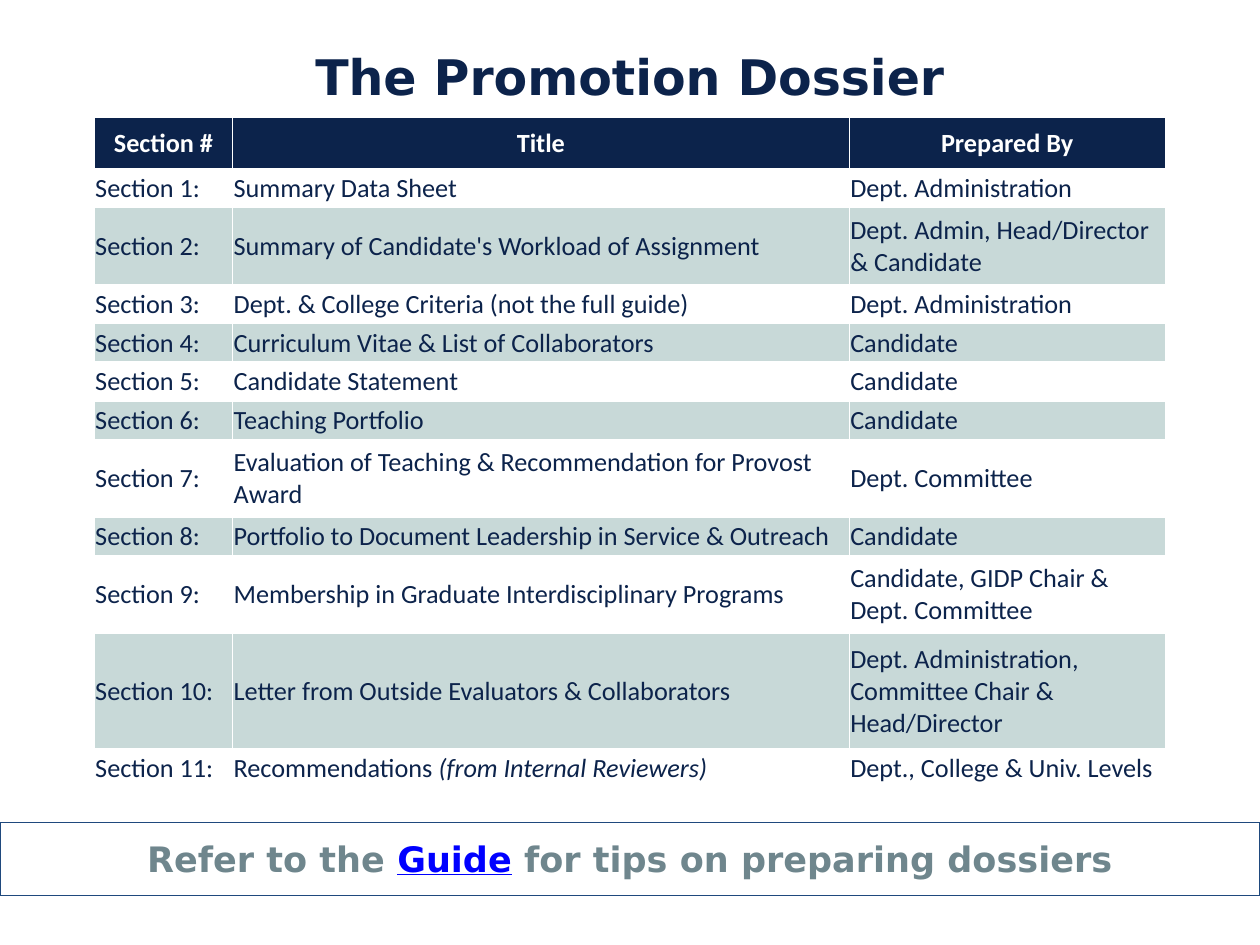
from dataclasses import dataclass

from lxml import etree
from pptx import Presentation
from pptx import util as u
from pptx.dml.color import RGBColor
from pptx.enum import shapes, text
from pptx.oxml.ns import qn

NAVY = RGBColor(0x0C, 0x23, 0x4B)
SAGE = RGBColor(0xC8, 0xD9, 0xD8)
SLATE = RGBColor(0x6F, 0x86, 0x8D)
OUTLINE = RGBColor(0x1F, 0x49, 0x7D)
LINK = RGBColor(0x00, 0x00, 0xFF)
WHITE = RGBColor(0xFF, 0xFF, 0xFF)

HEADING_FONT = "DejaVu Sans"
TABLE_FONT = "Calibri"
COLUMN_WIDTHS = (2.79, 12.43, 6.37)
HEADER_HEIGHT = 1.03
LINE_HEIGHT = 0.78


@dataclass
class Section:
    title: str
    prepared_by: str
    lines: int = 1
    title_note: str = ""


SECTIONS = [
    Section("Summary Data Sheet", "Dept. Administration"),
    Section("Summary of Candidate's Workload of Assignment",
            "Dept. Admin, Head/Director & Candidate", 2),
    Section("Dept. & College Criteria (not the full guide)", "Dept. Administration"),
    Section("Curriculum Vitae & List of Collaborators", "Candidate"),
    Section("Candidate Statement", "Candidate"),
    Section("Teaching Portfolio", "Candidate"),
    Section("Evaluation of Teaching & Recommendation for Provost Award",
            "Dept. Committee", 2),
    Section("Portfolio to Document Leadership in Service & Outreach", "Candidate"),
    Section("Membership in Graduate Interdisciplinary Programs",
            "Candidate, GIDP Chair & Dept. Committee", 2),
    Section("Letter from Outside Evaluators & Collaborators",
            "Dept. Administration, Committee Chair & Head/Director", 3),
    Section("Recommendations ", "Dept., College & Univ. Levels",
            title_note="(from Internal Reviewers)"),
]


def set_font(font, name: str, size: float, color: RGBColor, bold: bool) -> None:
    font.name, font.size, font.bold = name, u.Pt(size), bold
    font.color.rgb = color


def add_borders(cell, color: RGBColor) -> None:
    """Draw a 1 pt line on every side; borders come before the fill."""
    tc_pr = cell._tc.get_or_add_tcPr()
    for i, side in enumerate(("a:lnL", "a:lnR", "a:lnT", "a:lnB")):
        ln = etree.Element(qn(side), w=str(u.Pt(1)))
        fill = etree.SubElement(ln, qn("a:solidFill"))
        etree.SubElement(fill, qn("a:srgbClr"), val=str(color))
        tc_pr.insert(i, ln)


def fill_cell(cell, words: str, fill: RGBColor | None, header: bool = False,
              note: str = "") -> None:
    cell.margin_left = cell.margin_right = cell.margin_top = u.Cm(0.02)
    cell.margin_bottom = 0
    cell.vertical_anchor = text.MSO_ANCHOR.MIDDLE
    if fill is None:
        cell.fill.background()
    else:
        cell.fill.solid()
        cell.fill.fore_color.rgb = fill
    add_borders(cell, WHITE)

    p = cell.text_frame.paragraphs[0]
    p.alignment = text.PP_ALIGN.CENTER if header else text.PP_ALIGN.LEFT
    set_font(p.font, TABLE_FONT, 15, WHITE if header else NAVY, header)
    p.add_run().text = words
    if note:
        r = p.add_run()
        r.text = note
        r.font.italic = True


def add_title(s) -> None:
    sp = s.shapes.add_textbox(u.Cm(1.9), 0, u.Cm(21.59), u.Cm(3.07))
    tf = sp.text_frame
    tf.word_wrap = True
    tf.vertical_anchor = text.MSO_ANCHOR.MIDDLE
    p = tf.paragraphs[0]
    p.text = "The Promotion Dossier"
    p.alignment = text.PP_ALIGN.CENTER
    set_font(p.font, HEADING_FONT, 28, NAVY, True)


def add_section_table(s) -> None:
    heights = [HEADER_HEIGHT] + [LINE_HEIGHT * sec.lines for sec in SECTIONS]
    table = s.shapes.add_table(
        len(heights), len(COLUMN_WIDTHS), u.Cm(1.9), u.Cm(2.37),
        u.Cm(sum(COLUMN_WIDTHS)), u.Cm(sum(heights))).table
    for column, width in zip(table.columns, COLUMN_WIDTHS):
        column.width = u.Cm(width)
    for row, height in zip(table.rows, heights):
        row.height = u.Cm(height)

    for col, heading in enumerate(("Section #", "Title", "Prepared By")):
        fill_cell(table.cell(0, col), heading, NAVY, header=True)
    for n, sec in enumerate(SECTIONS, start=1):
        fill = SAGE if n % 2 == 0 else None
        fill_cell(table.cell(n, 0), f"Section {n}:", fill)
        fill_cell(table.cell(n, 1), sec.title, fill, note=sec.title_note)
        fill_cell(table.cell(n, 2), sec.prepared_by, fill)


def add_guide_banner(s) -> None:
    sp = s.shapes.add_shape(shapes.MSO_SHAPE.RECTANGLE, 0, u.Cm(16.58),
                            u.Cm(25.4), u.Cm(1.47))
    sp.shadow.inherit = False
    sp.fill.background()
    sp.line.color.rgb = OUTLINE
    sp.line.width = u.Pt(0.75)
    tf = sp.text_frame
    tf.word_wrap = False
    tf.vertical_anchor = text.MSO_ANCHOR.MIDDLE
    p = tf.paragraphs[0]
    p.alignment = text.PP_ALIGN.CENTER
    set_font(p.font, HEADING_FONT, 20, SLATE, True)
    for words in ("Refer to the ", "Guide", " for tips on preparing dossiers"):
        r = p.add_run()
        r.text = words
        if words == "Guide":
            r.font.color.rgb = LINK
            r.font.underline = True


def main() -> None:
    prs = Presentation()
    prs.slide_width, prs.slide_height = u.Cm(25.4), u.Cm(19.05)
    s = prs.slides.add_slide(prs.slide_layouts[6])

    # Heading, dossier sections, closing pointer
    add_title(s)
    add_section_table(s)
    add_guide_banner(s)
    prs.save("out.pptx")


if __name__ == "__main__":
    main()
